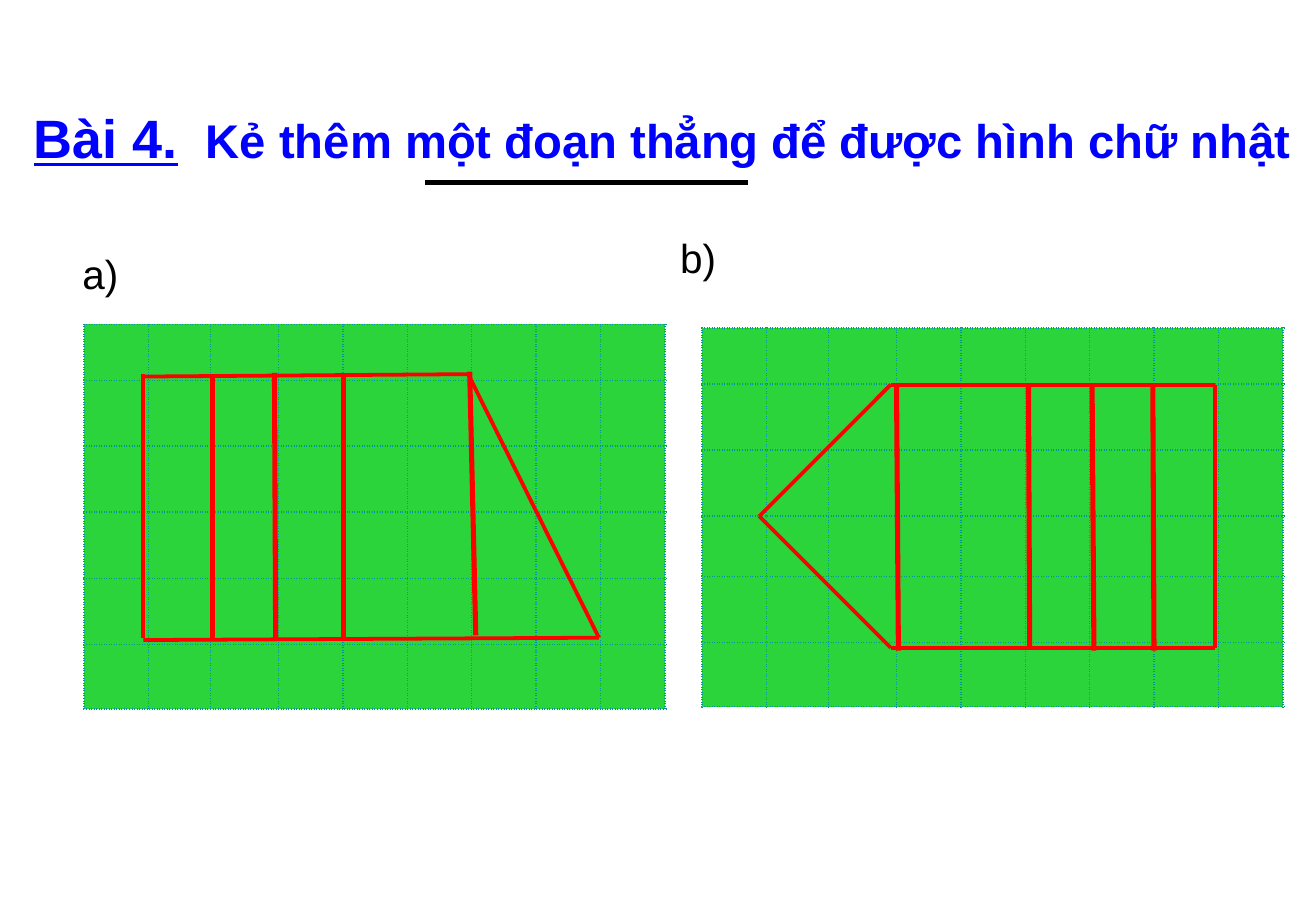
"""Build the slide of exercise 4: add one segment to get a rectangle."""
import pptx
import pptx.dml.color
import pptx.enum.shapes
import pptx.enum.text
import pptx.oxml
import pptx.oxml.ns
import pptx.util

Pt = pptx.util.Pt
FONT = "Arial"
COLORS = {"title": "0000FF", "text": "000000", "cell": "2CD43C", "grid": "009999", "figure": "FF0000"}

TITLE_BOX = (12.2, 33.1, 768.2, 95.8)
TITLE_RUNS = [
    ("Bài 4.", 32, True, True),
    (" ", 32, False, False),
    (" Kẻ thêm một đoạn thẳng để được hình chữ nhật ", 28, True, False),
]
UNDERLINE = (252, 108, 443.5, 108)
COLUMNS = [38.2, 36.7, 40.3] + [38.2] * 6
PARTS = [
    {
        "label": ("a)", 41.8, 144, 36),
        "corner": (49.9, 192.2),
        "rows": [33.2, 39.1, 39.1, 39.4, 39.1, 38.3],
        "outline": [
            (85, 223.2, 277.5, 221.8),
            (277.5, 221.8, 355, 378),
            (85, 221.8, 85, 378),
            (85, 379.4, 355, 378),
        ],
        "segments": [
            (278.4, 220.3, 282, 376.6),
            (126, 222.5, 126, 378.7),
            (203.8, 223.2, 203.8, 379.4),
            (162.7, 221, 163.4, 378.7),
        ],
    },
    {
        "label": ("b)", 396, 134.6, 48),
        "corner": (416.2, 194.4),
        "rows": [33.2, 39.1, 39.1, 36.1, 39.1, 38],
        "outline": [
            (450, 306, 528, 228),
            (528, 228, 720, 228),
            (720, 228, 720, 384),
            (720, 384, 528, 384),
            (528, 384, 450, 306),
        ],
        "segments": [
            (683.3, 228.2, 684, 385.6),
            (609.6, 227.5, 610.3, 384.8),
            (647.3, 228.2, 648.4, 385.6),
            (531.4, 228.2, 532.5, 385.6),
        ],
    },
]


def rgb(name):
    return pptx.dml.color.RGBColor.from_string(COLORS[name])


def add_run(para, text, size, color, bold=False, underline=False):
    span = para.add_run()
    span.text = text
    span.font.name = FONT
    span.font.size = Pt(size)
    span.font.bold = bold
    span.font.underline = underline
    span.font.color.rgb = rgb(color)


def add_line(shapes, ends, color, width):
    line = shapes.add_connector(pptx.enum.shapes.MSO_CONNECTOR.STRAIGHT, *map(Pt, ends))
    line.line.color.rgb = rgb(color)
    line.line.width = Pt(width)
    line._element.spPr.append(pptx.oxml.parse_xml(f'<a:effectLst {pptx.oxml.ns.nsdecls("a")}/>'))


def format_cell(cell):
    cell.fill.solid()
    cell.fill.fore_color.rgb = rgb("cell")
    properties = cell._tc.get_or_add_tcPr()
    for index, side in enumerate("LRTB"):
        border = pptx.oxml.parse_xml(
            f'<a:ln{side} {pptx.oxml.ns.nsdecls("a")} w="{Pt(1)}"><a:solidFill>'
            f'<a:srgbClr val="{COLORS["grid"]}"/></a:solidFill><a:prstDash val="sysDot"/></a:ln{side}>'
        )
        properties.insert(index, border)


def add_grid(shapes, corner, rows):
    size = (sum(COLUMNS), sum(rows))
    table = shapes.add_table(len(rows), len(COLUMNS), *map(Pt, corner + size)).table
    table.first_row = False
    table.horz_banding = False
    for column, width in zip(table.columns, COLUMNS):
        column.width = Pt(width)
    for row, height in zip(table.rows, rows):
        row.height = Pt(height)
    for cell in table.iter_cells():
        format_cell(cell)


def add_label(shapes, text, left, top, width):
    box = shapes.add_textbox(Pt(left), Pt(top), Pt(width), Pt(36))
    box.text_frame.word_wrap = True
    para = box.text_frame.paragraphs[0]
    para.space_before = Pt(2.5)
    add_run(para, text, 24, "text")


def add_title(title):
    title.left, title.top, title.width, title.height = map(Pt, TITLE_BOX)
    frame = title.text_frame
    frame.auto_size = pptx.enum.text.MSO_AUTO_SIZE.NONE
    frame.vertical_anchor = pptx.enum.text.MSO_ANCHOR.MIDDLE
    para = frame.paragraphs[0]
    para.alignment = pptx.enum.text.PP_ALIGN.CENTER
    for text, size, bold, underline in TITLE_RUNS:
        add_run(para, text, size, "title", bold, underline)


def main():
    deck = pptx.Presentation()
    deck.slide_width, deck.slide_height = Pt(780), Pt(540)
    page = deck.slides.add_slide(deck.slide_layouts[5])
    add_title(page.shapes.title)
    add_line(page.shapes, UNDERLINE, "text", 3)
    for part in PARTS:
        add_label(page.shapes, *part["label"])
        add_grid(page.shapes, part["corner"], part["rows"])
        figure = page.shapes.add_group_shape()
        for ends in part["outline"]:
            add_line(figure.shapes, ends, "figure", 2.25)
        for ends in part["segments"]:
            add_line(page.shapes, ends, "figure", 3)
    deck.save("out.pptx")


if __name__ == "__main__":
    main()
